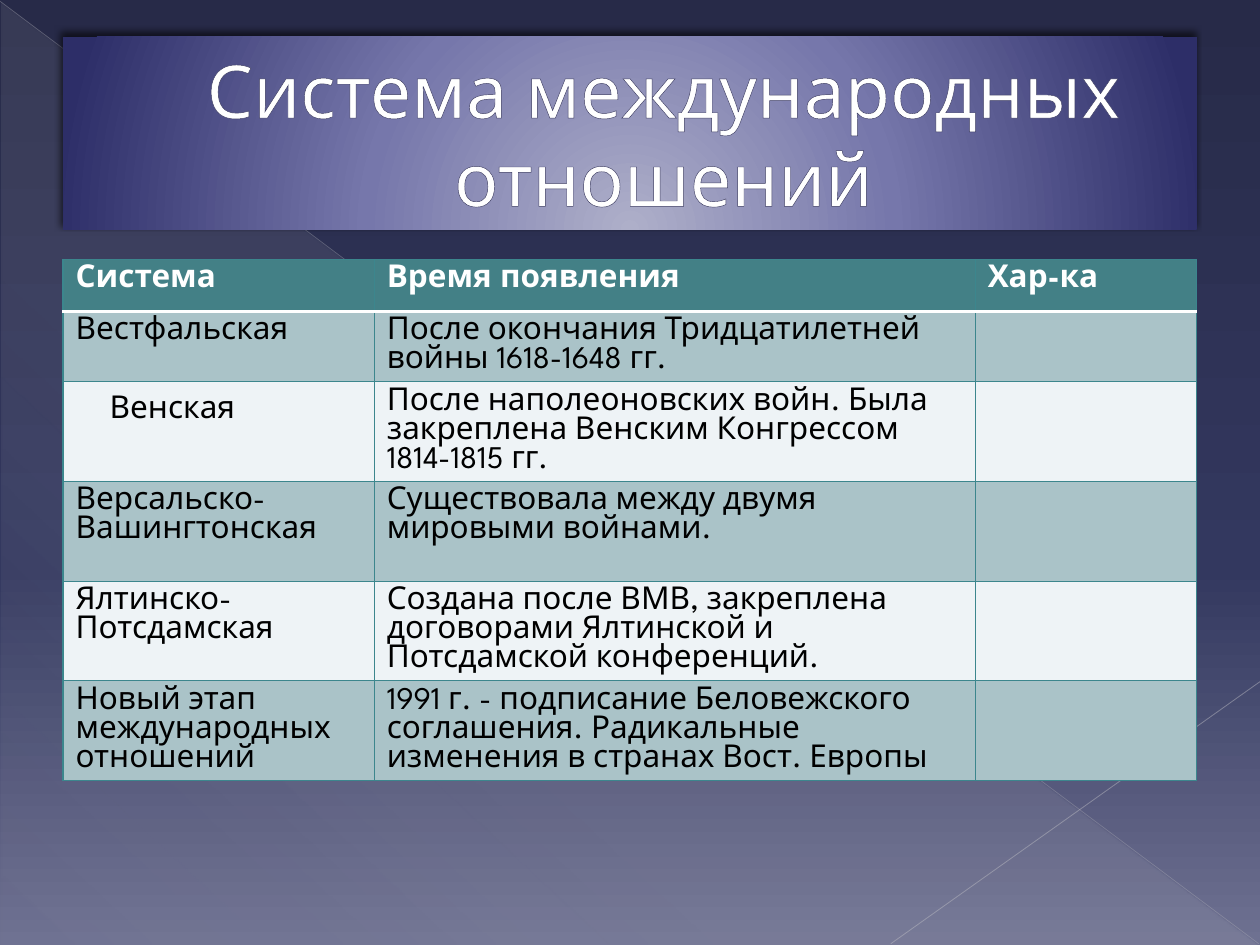
from typing import NamedTuple

from lxml.etree import SubElement
from pptx import Presentation
from pptx.dml.color import RGBColor
from pptx.enum.shapes import MSO_CONNECTOR as Link, MSO_SHAPE as Kind
from pptx.enum.text import MSO_ANCHOR as Anchor, PP_ALIGN as Align
from pptx.oxml import parse_xml
from pptx.oxml.ns import nsdecls, qn
from pptx.util import Inches, Pt

FONT = "League Spartan"
TEAL, BAND, PALE, EDGE = "438086", "AAC3C8", "EEF3F6", "3C868D"


class Stop(NamedTuple):
    pos: int
    color: str
    alpha: int = 100


class Ray(NamedTuple):
    start: tuple[float, float]
    end: tuple[float, float]
    color: str
    width: float
    alpha: int


class Row(NamedTuple):
    name: str
    time: str
    height: float
    note: str = ""


RAYS = [
    Ray((0, 0.01), (9.99, 7.49), "B7B7BE", 0.39, 35),
    Ray((10, 5.41), (7.07, 7.49), "BFBFC5", 0.47, 45),
]
COLS = [2.47, 4.77, 1.76]
ROWS = [
    Row("Система", "Время появления", 0.41, "Хар-ка"),
    Row("Вестфальская", "После окончания Тридцатилетней войны 1618-1648 гг.", 0.56),
    Row("Венская", "После наполеоновских войн. Была закреплена Венским "
        "Конгрессом 1814-1815 гг.", 0.79),
    Row("Версальско-Вашингтонская", "Существовала между двумя мировыми войнами.", 0.79),
    Row("Ялтинско-Потсдамская", "Создана после ВМВ, закреплена договорами "
        "Ялтинской и Потсдамской конференций.", 0.79),
    Row("Новый этап международных отношений", "1991 г. - подписание Беловежского "
        "соглашения. Радикальные изменения в странах Вост. Европы", 0.79),
]


def rgb(code: str) -> RGBColor:
    return RGBColor.from_string(code)


def tint(code: str, alpha: int = 100) -> str:
    """Return the XML of a colour with its opacity in percent."""
    return f'<a:srgbClr val="{code}"><a:alpha val="{alpha * 1000}"/></a:srgbClr>'


def fade(props, stops: list[Stop], way: str) -> None:
    """Swap the solid fill in props for a gradient that runs along way."""
    marks = "".join(f'<a:gs pos="{s.pos * 1000}">{tint(s.color, s.alpha)}</a:gs>'
                    for s in stops)
    grad = parse_xml(f'<a:gradFill {nsdecls("a")} rotWithShape="1">'
                     f"<a:gsLst>{marks}</a:gsLst>{way}</a:gradFill>")
    props.replace(props.find(qn("a:solidFill")), grad)


def slant(angle: int) -> str:
    return f'<a:lin ang="{angle * 60000}" scaled="0"/>'


def add_block(slide, kind, box: tuple, stops: list[Stop], way: str):
    shape = slide.shapes.add_shape(kind, *map(Inches, box))
    shape.shadow.inherit = False
    shape.line.fill.background()
    shape.fill.solid()
    fade(shape.element.spPr, stops, way)
    return shape


def add_ray(slide, ray: Ray) -> None:
    line = slide.shapes.add_connector(
        Link.STRAIGHT, *map(Inches, ray.start + ray.end))
    line.line.width = Pt(ray.width)
    line.line.color.rgb = rgb(ray.color)
    props = line.element.spPr
    color = props.find(".//" + qn("a:srgbClr"))
    SubElement(color, qn("a:alpha"), val=str(ray.alpha * 1000))
    SubElement(props, qn("a:effectLst"))


def style(run, size: float, color: str, bold: bool = False) -> None:
    font = run.font
    font.name, font.size, font.bold = FONT, Pt(size), bold
    font.color.rgb = rgb(color)


def add_title(slide) -> None:
    shape = add_block(
        slide, Kind.RECTANGLE, (0.5, 0.29, 9, 1.53),
        [Stop(0, "AEAFC9"), Stop(46, "7677AB"), Stop(100, "2D2E68")],
        '<a:path path="circle"><a:fillToRect l="50000" t="155000" '
        'r="50000" b="-55000"/></a:path>')
    glow = shape.element.spPr.find(qn("a:effectLst"))
    glow.append(parse_xml(
        f'<a:outerShdw {nsdecls("a")} blurRad="{Pt(4)}" dist="{Pt(3)}" '
        f'dir="{245 * 60000}" rotWithShape="0">{tint("000000", 60)}</a:outerShdw>'))
    frame = shape.text_frame
    frame.text = "Система международных отношений"
    frame.word_wrap = True
    frame.vertical_anchor = Anchor.MIDDLE
    para = frame.paragraphs[0]
    para.alignment = Align.CENTER
    para._p.get_or_add_pPr().set("marL", str(Inches(0.53)))
    run = para.runs[0]
    style(run, 42, "FFFFFF")
    run.font._element.insert(0, parse_xml(
        f'<a:ln {nsdecls("a")} w="{Pt(0.5)}"><a:solidFill>{tint("3A3A60")}'
        "</a:solidFill></a:ln>"))


def set_edges(cell, head: bool, below: bool) -> None:
    """Draw the four borders; the rule under the heading is white."""
    props = cell._tc.get_or_add_tcPr()
    for at, side in enumerate("LRTB"):
        white = (head and side == "B") or (below and side == "T")
        color, width = ("FFFFFF", 2) if white else (EDGE, 0.75)
        props.insert(at, parse_xml(
            f'<a:ln{side} {nsdecls("a")} w="{Pt(width)}"><a:solidFill>'
            f"{tint(color)}</a:solidFill></a:ln{side}>"))


def add_grid(slide) -> None:
    high = sum(row.height for row in ROWS)
    table = slide.shapes.add_table(
        len(ROWS), len(COLS), *map(Inches, (0.5, 2.06, sum(COLS), high))).table
    for col, width in zip(table.columns, COLS):
        col.width = Inches(width)
    for at, row in enumerate(ROWS):
        head = at == 0
        table.rows[at].height = Inches(row.height)
        for col, text in enumerate((row.name, row.time, row.note)):
            cell = table.cell(at, col)
            cell.fill.solid()
            cell.fill.fore_color.rgb = rgb(TEAL if head else BAND if at % 2 else PALE)
            set_edges(cell, head, at == 1)
            para = cell.text_frame.paragraphs[0]
            para.text = text
            para.font.size = Pt(18)
            for run in para.runs:
                style(run, 18, "FFFFFF" if head else "000000", head)

    cell = table.cell(2, 0)
    cell.margin_left = cell.margin_right = Inches(0.07)
    cell.margin_top = cell.margin_bottom = 0
    para = cell.text_frame.paragraphs[0]
    para.line_spacing = 1.5
    para._p.get_or_add_pPr().set("indent", str(Inches(0.3)))


def main() -> None:
    deck = Presentation()
    deck.slide_width, deck.slide_height = Inches(10), Inches(7.5)
    slide = deck.slides.add_slide(deck.slide_layouts[6])
    slide.background.fill.solid()
    fade(slide.element.find(".//" + qn("p:bgPr")),
         [Stop(0, "272A48"), Stop(60, "33385F"), Stop(100, "6E7191")], slant(90))
    add_block(slide, Kind.RIGHT_TRIANGLE, (0.01, 0.02, 9.98, 7.48),
              [Stop(0, "DEDEDE", 10), Stop(70, "DEDEDE", 8), Stop(100, "DEDEDE", 1)],
              slant(133))
    for ray in RAYS:
        add_ray(slide, ray)
    add_title(slide)
    add_grid(slide)
    deck.save("out.pptx")


if __name__ == "__main__":
    main()
